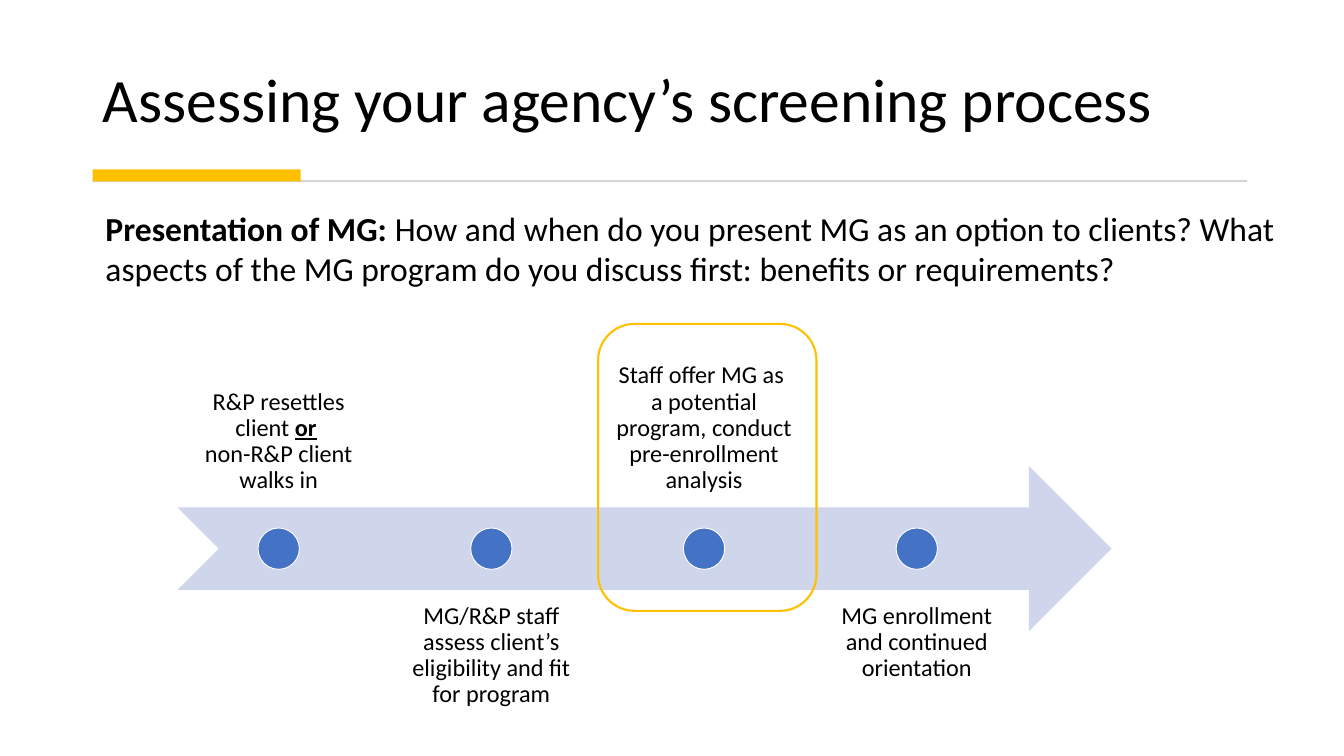
from dataclasses import dataclass

from pptx import Presentation
from pptx.dml.color import RGBColor
from pptx.enum.shapes import MSO_SHAPE as Preset
from pptx.enum.text import MSO_ANCHOR as Anchor, MSO_AUTO_SIZE as AutoSize, PP_ALIGN as Align
from pptx.util import Inches, Pt

COLUMNS, ROWS = 200, 112.5
TITLE_ONLY = 5


@dataclass(frozen=True)
class Theme:
    font: str = "Calibri"
    text: str = "000000"
    accent: str = "FFC000"
    rule: str = "D5D5D5"
    arrow: str = "CFD5EA"
    dot: str = "4472C4"
    outline: str = "FFFFFF"
    title_size: float = 66
    body_size: float = 36
    step_size: float = 26


@dataclass(frozen=True)
class Box:
    left: float
    top: float
    width: float
    height: float

    def inner(self, left, top, width, height):
        return Box(self.left + left * self.width, self.top + top * self.height,
                   width * self.width, height * self.height)

    def lengths(self):
        column, row = Inches(20) / COLUMNS, Inches(11.25) / ROWS
        return [round(value * unit) for value, unit in
                zip((self.left, self.top, self.width, self.height), (column, row, column, row))]


THEME = Theme()
STEPS = [
    [("R&P resettles client ", {}), ("or", {"bold": True, "underline": True}),
     (" ", {}), ("\n", {}), ("non-R&P client walks in", {})],
    [("MG/R&P staff assess client’s eligibility and fit for program", {})],
    [("Staff offer MG as ", {}), ("\n", {}),
     ("a potential program, conduct pre-enrollment analysis", {})],
    [("MG enrollment and continued orientation", {})],
]


def apply(target, values):
    for name, value in values.items():
        setattr(target, name, value)


def write(shape, runs, size, inset, frame_format, paragraph_format):
    frame = shape.text_frame
    apply(frame, {"word_wrap": True, "auto_size": AutoSize.NONE,
                  "margin_left": Inches(inset[0]), "margin_right": Inches(inset[0]),
                  "margin_top": Inches(inset[1]), "margin_bottom": Inches(inset[1]),
                  **frame_format})
    paragraph = frame.paragraphs[0]
    apply(paragraph, paragraph_format)
    for text, run_format in runs:
        if text == "\n":
            paragraph.add_line_break()
            continue
        run = paragraph.add_run()
        run.text = text
        apply(run.font, {"name": THEME.font, "size": Pt(size), **run_format})
        run.font.color.rgb = RGBColor.from_string(THEME.text)


def add_preset(shapes, preset, box, fill=None, line=None, line_width=1):
    shape = shapes.add_shape(preset, *box.lengths())
    shape.shadow.inherit = False
    if fill:
        shape.fill.solid()
        shape.fill.fore_color.rgb = RGBColor.from_string(fill)
    else:
        shape.fill.background()
    if line:
        shape.line.color.rgb = RGBColor.from_string(line)
        shape.line.width = Pt(line_width)
    else:
        shape.line.fill.background()


def place_title(slide, box):
    title = slide.shapes.title
    apply(title, dict(zip(("left", "top", "width", "height"), box.lengths())))
    write(title, [("Assessing your agency’s screening process", {})], THEME.title_size,
          (0.15, 0.07), {"vertical_anchor": Anchor.BOTTOM},
          {"alignment": Align.LEFT, "line_spacing": 0.9})


def place_divider(slide, box):
    add_preset(slide.shapes, Preset.RECTANGLE, box.inner(0, 0.84, 1, 0.16), THEME.rule)
    add_preset(slide.shapes, Preset.RECTANGLE, box.inner(0, 0, 0.18, 0.95), THEME.accent)


def place_question(slide, box):
    question = slide.shapes.add_textbox(*box.lengths())
    runs = [("Presentation of MG: ", {"bold": True}),
            ("How and when do you present MG as an option to clients? What aspects of the "
             "MG program do you discuss first: benefits or requirements?", {})]
    write(question, runs, THEME.body_size, (0.15, 0.07),
          {"vertical_anchor": Anchor.TOP}, {"space_after": Pt(9)})


def place_timeline(slide, box):
    shapes = slide.shapes.add_group_shape().shapes
    add_preset(shapes, Preset.NOTCHED_RIGHT_ARROW, box.inner(0, 0.3, 1, 0.4), THEME.arrow)
    gap = 0.05
    step_width = 0.9 / (len(STEPS) + gap * (len(STEPS) - 1))
    for index, runs in enumerate(STEPS):
        step = box.inner(index * step_width * (1 + gap), 0, step_width, 1)
        above = index % 2 == 0
        label = shapes.add_textbox(*step.inner(0, 0 if above else 0.6, 1, 0.4).lengths())
        write(label, runs, THEME.step_size, (0.2, 0.2),
              {"vertical_anchor": Anchor.BOTTOM if above else Anchor.TOP},
              {"alignment": Align.CENTER, "line_spacing": 0.9})
        share = box.height / 10 / step.width
        add_preset(shapes, Preset.OVAL, step.inner((1 - share) / 2, 0.45, share, 0.1),
                   THEME.dot, THEME.outline)


def place_highlight(slide, box):
    add_preset(slide.shapes, Preset.ROUNDED_RECTANGLE, box,
               line=THEME.accent, line_width=2.25)


def main():
    presentation = Presentation()
    apply(presentation, {"slide_width": Inches(20), "slide_height": Inches(11.25)})
    slide = presentation.slides.add_slide(presentation.slide_layouts[TITLE_ONLY])
    place_title(slide, Box(13.8, 4.2, 172.3, 16.7))
    place_divider(slide, Box(13.8, 25.2, 171.8, 1.9))
    place_question(slide, Box(14.2, 30.2, 179.4, 11.4))
    place_timeline(slide, Box(26.4, 50.9, 139, 61.5))
    place_highlight(slide, Box(89, 48.2, 32.5, 42.7))
    presentation.save("out.pptx")


if __name__ == "__main__":
    main()
